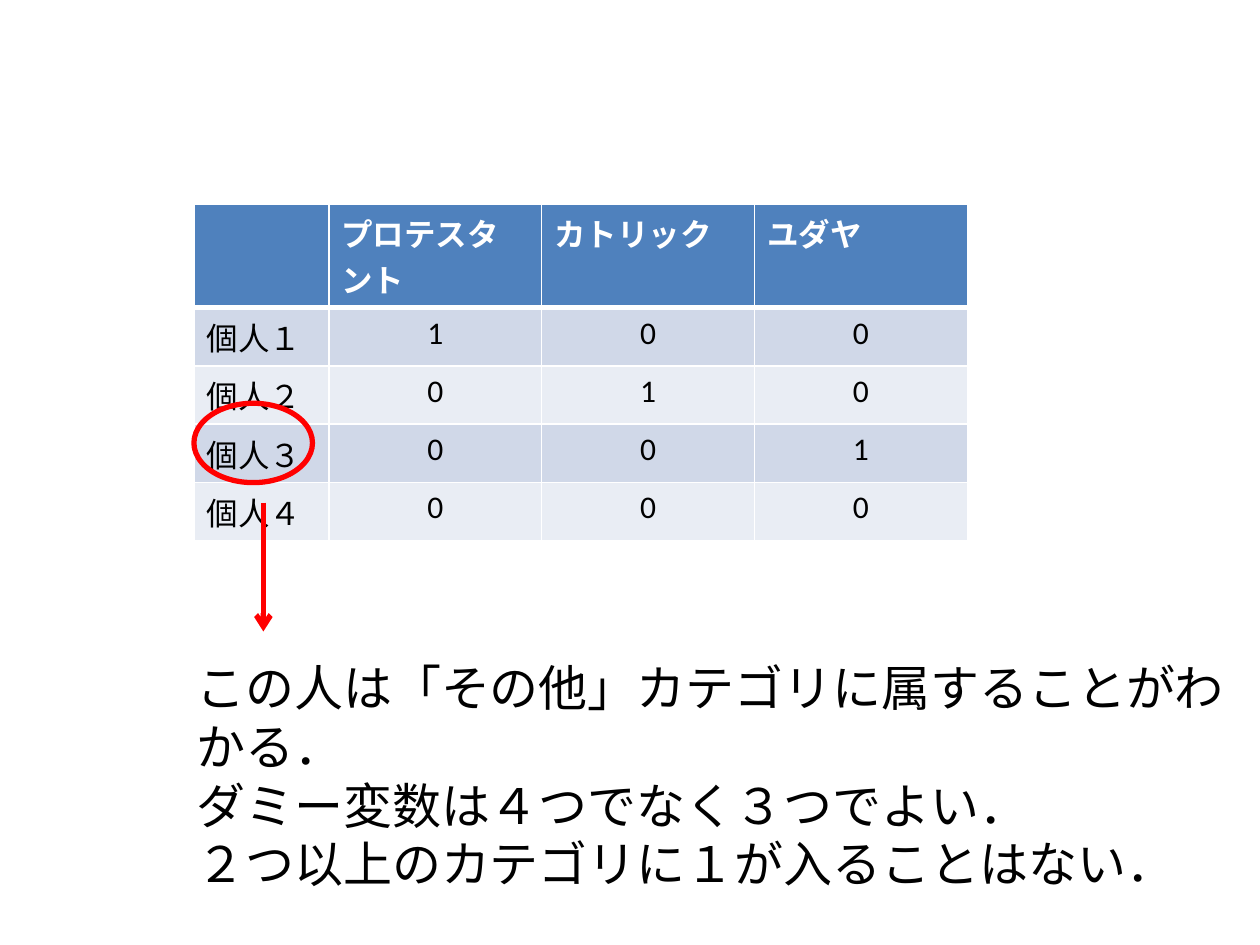
from dataclasses import dataclass

from lxml import etree
from pptx import Presentation
from pptx.dml.color import RGBColor
from pptx.enum import shapes, text
from pptx.oxml import ns
from pptx.util import Cm, Pt

COLORS = {
    "header": "4F81BD",
    "odd_row": "D0D8E8",
    "even_row": "E9EDF4",
    "white": "FFFFFF",
    "black": "000000",
    "mark": "FF0000",
}
FONT = "Calibri"
HEADINGS = ["", "プロテスタント", "カトリック", "ユダヤ"]
REMARKS = [
    "この人は「その他」カテゴリに属することがわかる．",
    "ダミー変数は４つでなく３つでよい．",
    "２つ以上のカテゴリに１が入ることはない．",
]


@dataclass
class Person:
    label: str
    dummies: tuple[int, int, int]


PEOPLE = [
    Person("個人１", (1, 0, 0)),
    Person("個人２", (0, 1, 0)),
    Person("個人３", (0, 0, 1)),
    Person("個人４", (0, 0, 0)),
]


def rgb(name: str) -> RGBColor:
    return RGBColor.from_string(COLORS[name])


def write(frame, lines, *, size=18, color="black", bold=False,
          align=text.PP_ALIGN.LEFT) -> None:
    for index, line in enumerate(lines):
        paragraph = frame.paragraphs[0] if index == 0 else frame.add_paragraph()
        paragraph.alignment = align
        run = paragraph.add_run()
        run.text = line
        run.font.name = FONT
        run.font.size = Pt(size)
        run.font.bold = bold
        run.font.color.rgb = rgb(color)


def set_borders(cell, top: float = 1, bottom: float = 1) -> None:
    """Draw white cell edges; they must precede the fill in the cell's XML."""
    properties = cell._tc.get_or_add_tcPr()
    widths = {"lnL": 1, "lnR": 1, "lnT": top, "lnB": bottom}
    for position, (edge, width) in enumerate(widths.items()):
        line = etree.Element(ns.qn(f"a:{edge}"), w=str(Pt(width)))
        fill = etree.SubElement(line, ns.qn("a:solidFill"))
        etree.SubElement(fill, ns.qn("a:srgbClr"), val=COLORS["white"])
        properties.insert(position, line)


def fill_cell(cell, content: str, fill: str, **text_format) -> None:
    cell.fill.solid()
    cell.fill.fore_color.rgb = rgb(fill)
    if content:
        write(cell.text_frame, [content], **text_format)


def add_dummy_table(slide) -> None:
    row_height = Cm(1.03)
    table = slide.shapes.add_table(
        len(PEOPLE) + 1, len(HEADINGS), Cm(3.91), Cm(4.11), Cm(15.6), row_height * 5
    ).table
    for row in table.rows:
        row.height = row_height
    for index, column in enumerate(table.columns):
        column.width = Cm(4.29) if index else Cm(2.72)

    for column, heading in enumerate(HEADINGS):
        cell = table.cell(0, column)
        fill_cell(cell, heading, "header", color="white", bold=True)
        set_borders(cell, bottom=3)
    for row, person in enumerate(PEOPLE, start=1):
        fill = "odd_row" if row % 2 else "even_row"
        for column, value in enumerate((person.label, *person.dummies)):
            cell = table.cell(row, column)
            align = text.PP_ALIGN.CENTER if column else text.PP_ALIGN.LEFT
            fill_cell(cell, str(value), fill, align=align)
            set_borders(cell, top=3 if row == 1 else 1)


def style_mark(line) -> None:
    line.color.rgb = rgb("mark")
    line.width = Pt(3)


def add_ring(slide) -> None:
    ring = slide.shapes.add_shape(
        shapes.MSO_SHAPE.OVAL, Cm(3.91), Cm(8.13), Cm(2.39), Cm(1.6)
    )
    ring.shadow.inherit = False
    ring.fill.background()
    style_mark(ring.line)


def add_arrow(slide) -> None:
    arrow = slide.shapes.add_connector(
        shapes.MSO_CONNECTOR.STRAIGHT, Cm(5.31), Cm(10.13), Cm(5.31), Cm(12.73)
    )
    style_mark(arrow.line)
    etree.SubElement(arrow.line._get_or_add_ln(), ns.qn("a:tailEnd"), type="arrow")
    etree.SubElement(arrow._element.spPr, ns.qn("a:effectLst"))


def add_remarks(slide) -> None:
    frame = slide.shapes.add_textbox(
        Cm(3.71), Cm(13.13), Cm(21.39), Cm(3.84)
    ).text_frame
    frame.word_wrap = False
    frame.auto_size = text.MSO_AUTO_SIZE.SHAPE_TO_FIT_TEXT
    write(frame, REMARKS, size=28)


def main() -> None:
    deck = Presentation()
    deck.slide_width, deck.slide_height = Cm(25.4), Cm(19.05)
    slide = deck.slides.add_slide(deck.slide_layouts[6])
    add_dummy_table(slide)
    add_ring(slide)
    add_arrow(slide)
    add_remarks(slide)
    deck.save("out.pptx")


if __name__ == "__main__":
    main()
